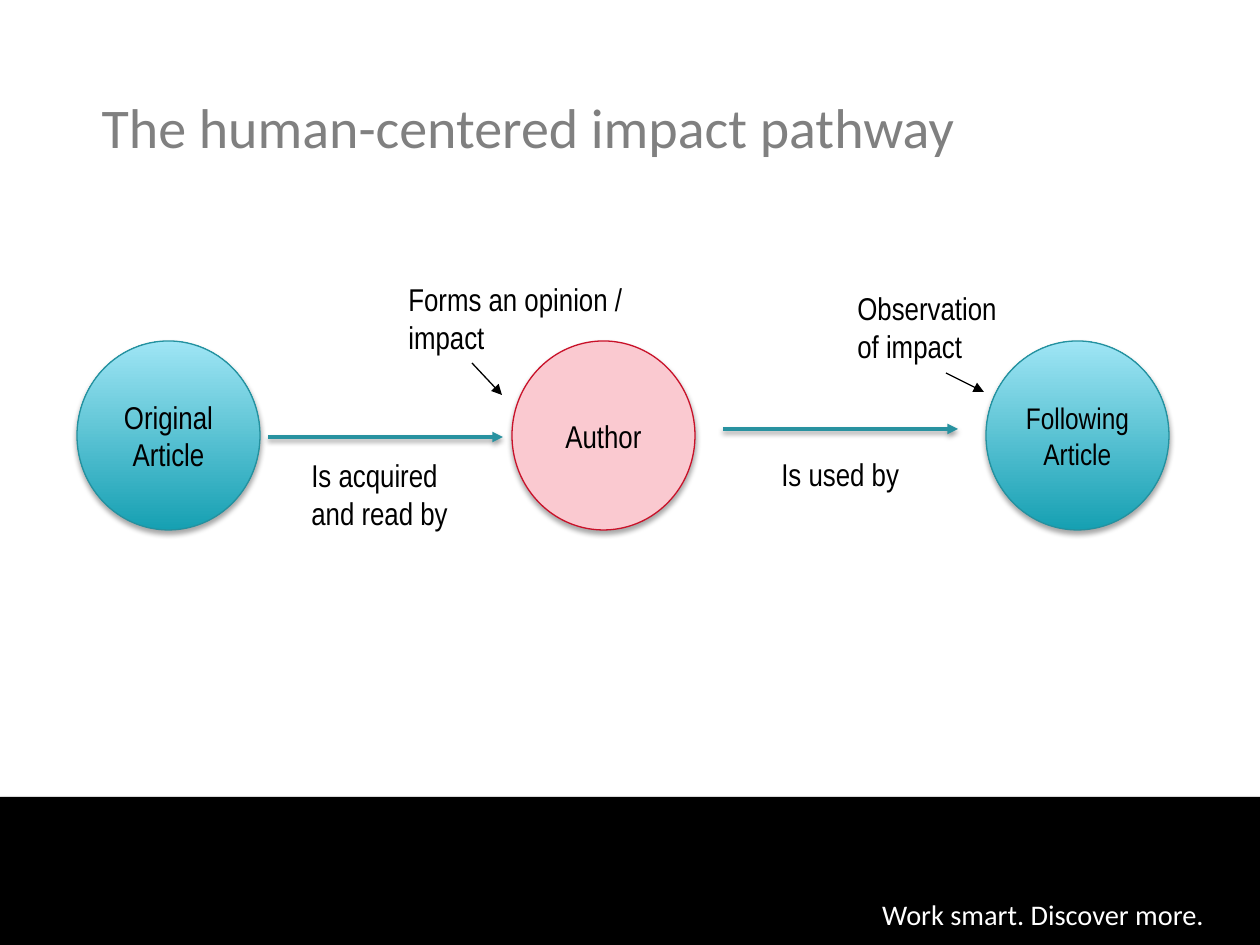
from lxml.etree import SubElement
from pptx import Presentation
from pptx.dml.color import RGBColor
from pptx.enum.shapes import MSO_CONNECTOR, MSO_SHAPE
from pptx.enum.text import MSO_ANCHOR, PP_ALIGN
from pptx.oxml.ns import qn
from pptx.util import Inches, Pt

PX = 7257  # EMU per pixel, 126 pixels to the inch
COLORS = {
    "black": "000000", "white": "FFFFFF", "title": "808080",
    "teal_dark": "16A0B2", "teal_light": "9FE5F5", "teal_line": "24919F",
    "pink": "FAC9D0", "red_line": "C91129", "arrow": "2892A0",
}
RGB = {name: RGBColor.from_string(value) for name, value in COLORS.items()}


def write_text(frame, text, font="Arial Narrow", size=18, color="black",
               align=PP_ALIGN.LEFT, anchor=MSO_ANCHOR.TOP, wrap=True, baseline=None):
    frame.word_wrap = wrap
    frame.vertical_anchor = anchor
    paragraph = frame.paragraphs[0]
    paragraph.alignment = align
    run = paragraph.add_run()
    run.text = text
    run.font.name = font
    run.font.size = Pt(size)
    run.font.color.rgb = RGB[color]
    if baseline:
        run.font._element.set("baseline", str(baseline * 1000))


def add_shadow(effects, distance, opacity):
    shadow = SubElement(effects, qn("a:outerShdw"), blurRad=str(Pt(3.1)),
                        dist=str(Pt(distance)), dir="5400000", rotWithShape="0")
    color = SubElement(shadow, qn("a:srgbClr"), val=COLORS["black"])
    SubElement(color, qn("a:alpha"), val=str(opacity * 1000))


presentation = Presentation()
presentation.slide_width = Inches(10)
presentation.slide_height = Inches(7.5)
slide = presentation.slides.add_slide(presentation.slide_layouts[5])
shapes = slide.shapes

# Footer band with tagline
band = shapes.add_shape(MSO_SHAPE.RECTANGLE, 0, 797 * PX, 1260 * PX, 148 * PX)
band.fill.solid()
band.fill.fore_color.rgb = RGB["black"]
band.line.fill.background()
band.shadow.inherit = False
add_shadow(band._element.spPr.find(qn("a:effectLst")), 1.8, 35)
tagline = shapes.add_textbox(819 * PX, 885 * PX, 397 * PX, 53 * PX)
write_text(tagline.text_frame, "Work smart. Discover more.", font="Calibri", size=28,
           color="white", align=PP_ALIGN.RIGHT, wrap=False, baseline=30)

# Title
title = shapes.title
title.left, title.top, title.width, title.height = 89 * PX, 48 * PX, 1135 * PX, 156 * PX
write_text(title.text_frame, "The human-centered impact pathway", font="Calibri",
           size=32, color="title", anchor=MSO_ANCHOR.MIDDLE)

# Circles: left, text, text size, fill colours from bottom to top, outline
circles = [
    (77, "Original Article", 18, ["teal_dark", "teal_light"], "teal_line"),
    (512, "Author", 18, ["pink"], "red_line"),
    (986, "Following Article", 17, ["teal_dark", "teal_light"], "teal_line"),
]
for left, text, size, fills, outline in circles:
    circle = shapes.add_shape(MSO_SHAPE.OVAL, left * PX, 341 * PX, 183 * PX, 189 * PX)
    if len(fills) == 1:
        circle.fill.solid()
        circle.fill.fore_color.rgb = RGB[fills[0]]
    else:
        circle.fill.gradient()
        circle.fill.gradient_angle = 90
        for stop, name in zip(circle.fill.gradient_stops, fills):
            stop.color.rgb = RGB[name]
    circle.line.color.rgb = RGB[outline]
    circle.line.width = Pt(0.75)
    circle.shadow.inherit = False
    add_shadow(circle._element.spPr.find(qn("a:effectLst")), 1.8, 35)
    write_text(circle.text_frame, text, size=size, align=PP_ALIGN.CENTER,
               anchor=MSO_ANCHOR.MIDDLE)

# Arrows: start, end, colour, width; the wide ones cast a shadow
arrows = [
    (268, 437, 503, 437, "arrow", 2),
    (723, 429, 958, 429, "arrow", 2),
    (472, 363, 502, 395, "black", 0.75),
    (946, 373, 984, 392, "black", 0.75),
]
for x1, y1, x2, y2, color, width in arrows:
    arrow = shapes.add_connector(MSO_CONNECTOR.STRAIGHT, x1 * PX, y1 * PX, x2 * PX, y2 * PX)
    arrow.line.color.rgb = RGB[color]
    arrow.line.width = Pt(width)
    SubElement(arrow.line._get_or_add_ln(), qn("a:tailEnd"), type="triangle")
    effects = SubElement(arrow._element.spPr, qn("a:effectLst"))
    if width == 2:
        add_shadow(effects, 1.6, 38)

# Labels: left, top, width, height, text
labels = [
    (396, 274, 315, 89, "Forms an opinion / impact"),
    (299, 450, 189, 89, "Is acquired and read by"),
    (845, 283, 189, 89, "Observation of impact"),
    (769, 449, 189, 50, "Is used by"),
]
for left, top, width, height, text in labels:
    label = shapes.add_textbox(left * PX, top * PX, width * PX, height * PX)
    write_text(label.text_frame, text)

presentation.save("out.pptx")
